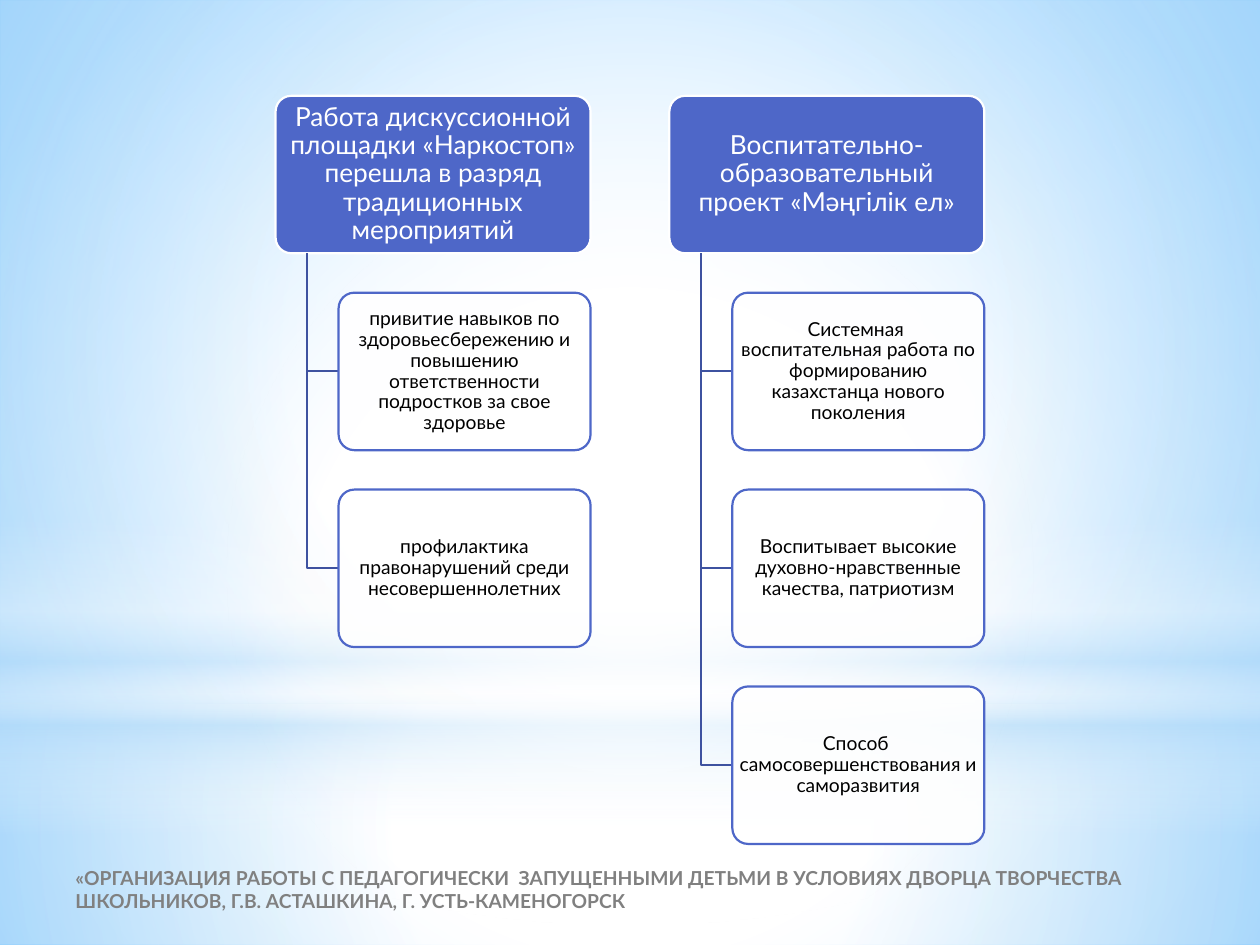
"""Build a slide with two projects and the results of each one."""
from lxml.etree import SubElement
from pptx import Presentation
from pptx.dml.color import RGBColor
from pptx.enum.shapes import MSO_SHAPE as Form
from pptx.enum.text import MSO_ANCHOR as Anchor, PP_ALIGN as Align
from pptx.oxml.ns import qn
from pptx.util import Pt

WHITE = RGBColor(0xFF, 0xFF, 0xFF)
BLACK = RGBColor(0, 0, 0)
GRAY = RGBColor(0x80, 0x80, 0x80)
SKY = RGBColor(0x63, 0xBC, 0xFF)
PALE = RGBColor(0xB4, 0xDC, 0xFA)
INDIGO = RGBColor(0x4E, 0x67, 0xC8)
NAVY = RGBColor(0x3E, 0x52, 0xA0)

PAGE_WIDTH, PAGE_HEIGHT = 720, 540
TOP, HEAD_WIDTH, BOX_HEIGHT = 54.75, 180, 90
COLUMN_GAP, ROW_PITCH = 45, 112.5
TRUNK_INDENT, ITEM_INDENT = 18, 36
CENTER = (50, 50, 50, 50)

BACKDROP = [
    (Form.RECTANGLE, 402, 138, [(0, WHITE, 91), (37, WHITE, 76), (100, PALE, 79)], CENTER),
    (Form.RECTANGLE, 0, 402, [(0, WHITE, 89), (48, WHITE, 62), (100, PALE, 79)], CENTER),
    (Form.RECTANGLE, 297, 180, [(0, WHITE, 0), (29, WHITE, 30), (45, PALE, 40),
                                (55, WHITE, 26), (65, PALE, 60), (100, WHITE, 0)], None),
    (Form.OVAL, 126, 402, [(0, WHITE, 100), (56, WHITE, 0)], CENTER),
]
PROJECTS = [
    ("Работа дискуссионной площадки «Наркостоп» перешла в разряд традиционных мероприятий",
     ["привитие навыков по здоровьесбережению и повышению ответственности подростков "
      "за свое здоровье",
      "профилактика правонарушений среди несовершеннолетних"]),
    ("Воспитательно-образовательный проект «Мәңгілік ел»",
     ["Системная  воспитательная работа по формированию казахстанца нового поколения",
      "Воспитывает высокие духовно-нравственные качества, патриотизм",
      "Способ  самосовершенствования и саморазвития"]),
]
FOOTER = ("«ОРГАНИЗАЦИЯ РАБОТЫ С ПЕДАГОГИЧЕСКИ  ЗАПУЩЕННЫМИ ДЕТЬМИ В УСЛОВИЯХ ДВОРЦА "
          "ТВОРЧЕСТВА ШКОЛЬНИКОВ, Г.В. АСТАШКИНА, Г. УСТЬ-КАМЕНОГОРСК")


def apply(target, values):
    """Set each named attribute of the target."""
    for name, value in values.items():
        setattr(target, name, value)


def set_alpha(color, percent):
    """Give a colour element an opacity."""
    SubElement(color, qn("a:alpha")).set("val", str(percent * 1000))


def set_gradient(fill, element, stops, focus):
    """Fill with a radial gradient around the focus, or a vertical one without it."""
    fill.gradient()
    gradient = next(element.iter(qn("a:gradFill")))
    gradient.clear()
    gradient.set("rotWithShape", "1")
    stop_list = SubElement(gradient, qn("a:gsLst"))
    for position, color, opacity in stops:
        stop = SubElement(stop_list, qn("a:gs"))
        stop.set("pos", str(position * 1000))
        color_node = SubElement(stop, qn("a:srgbClr"))
        color_node.set("val", str(color))
        set_alpha(color_node, opacity)
    if focus:
        radial = SubElement(gradient, qn("a:path"))
        radial.set("path", "circle")
        target = SubElement(radial, qn("a:fillToRect"))
        for side, share in zip("ltrb", focus):
            target.set(side, str(share * 1000))
    else:
        linear = SubElement(gradient, qn("a:lin"))
        linear.set("ang", "5400000")
        linear.set("scaled", "0")


def set_line(shape, color):
    """Outline the shape without a shadow."""
    shape.shadow.inherit = False
    shape.line.color.rgb = color
    shape.line.width = Pt(1.25)


def write(box, text, font, paragraph, frame):
    """Put one formatted paragraph into the box."""
    apply(box.text_frame, {"word_wrap": True, "vertical_anchor": Anchor.MIDDLE, **frame})
    para = box.text_frame.paragraphs[0]
    apply(para, paragraph)
    span = para.add_run()
    span.text = text
    apply(span.font, {"name": "Lato", "size": font["size"], "bold": font.get("bold", False)})
    span.font.color.rgb = font["color"]


def add_backdrop(page):
    """Lay the soft blue light over the background."""
    set_gradient(page.background.fill, page.element,
                 [(0, WHITE, 100), (42, WHITE, 100), (100, SKY, 100)], (24, 44, 24, 12))
    for form, top, height, stops, focus in BACKDROP:
        shape = page.shapes.add_shape(form, 0, Pt(top), Pt(PAGE_WIDTH), Pt(height))
        shape.shadow.inherit = False
        shape.line.fill.background()
        set_gradient(shape.fill, shape.element, stops, focus)


def add_box(page, left, top, width, text, style):
    """Add a rounded box with centred text."""
    box = page.shapes.add_shape(Form.ROUNDED_RECTANGLE, Pt(left), Pt(top),
                                Pt(width), Pt(BOX_HEIGHT))
    box.adjustments[0] = 0.1
    box.fill.solid()
    box.fill.fore_color.rgb = style["fill"]
    set_alpha(next(box.element.iter(qn("a:srgbClr"))), style["opacity"])
    set_line(box, style["line"])
    side = Pt(style["inset"])
    write(box, text, style, {"alignment": Align.CENTER, "line_spacing": 0.9},
          {"margin_left": side, "margin_right": side,
           "margin_top": Pt(1.5), "margin_bottom": Pt(1.5)})


def add_branch(page, left, top, right, bottom):
    """Add an elbow line that goes down and then right."""
    builder = page.shapes.build_freeform(Pt(left), Pt(top))
    builder.add_line_segments([(Pt(left), Pt(bottom)), (Pt(right), Pt(bottom))], close=False)
    branch = builder.convert_to_shape()
    branch.fill.background()
    set_line(branch, NAVY)


def add_project(page, left, title, items):
    """Add a project box with its items hanging below it."""
    head = {"fill": INDIGO, "opacity": 100, "line": WHITE, "inset": 2.25,
            "size": Pt(15), "color": WHITE}
    item = {"fill": WHITE, "opacity": 90, "line": INDIGO, "inset": 1.5,
            "size": Pt(11), "color": BLACK}
    add_box(page, left, TOP, HEAD_WIDTH, title, head)
    for row, text in enumerate(items, 1):
        top = TOP + row * ROW_PITCH
        add_branch(page, left + TRUNK_INDENT, TOP + BOX_HEIGHT,
                   left + ITEM_INDENT, top + BOX_HEIGHT / 2)
        add_box(page, left + ITEM_INDENT, top, HEAD_WIDTH - ITEM_INDENT, text, item)


def add_footer(page):
    """Add the line that names the work and its author."""
    box = page.shapes.add_textbox(Pt(36), Pt(486), Pt(664), Pt(44.64))
    write(box, FOOTER, {"size": Pt(11), "bold": True, "color": GRAY},
          {"alignment": Align.LEFT}, {})


def main():
    """Build and save the deck."""
    deck = Presentation()
    apply(deck, {"slide_width": Pt(PAGE_WIDTH), "slide_height": Pt(PAGE_HEIGHT)})
    page = deck.slides.add_slide(deck.slide_layouts[6])
    add_backdrop(page)
    pitch = HEAD_WIDTH + COLUMN_GAP
    start = (PAGE_WIDTH - len(PROJECTS) * pitch + COLUMN_GAP) / 2
    for column, (title, items) in enumerate(PROJECTS):
        add_project(page, start + column * pitch, title, items)
    add_footer(page)
    deck.save("out.pptx")


if __name__ == "__main__":
    main()
